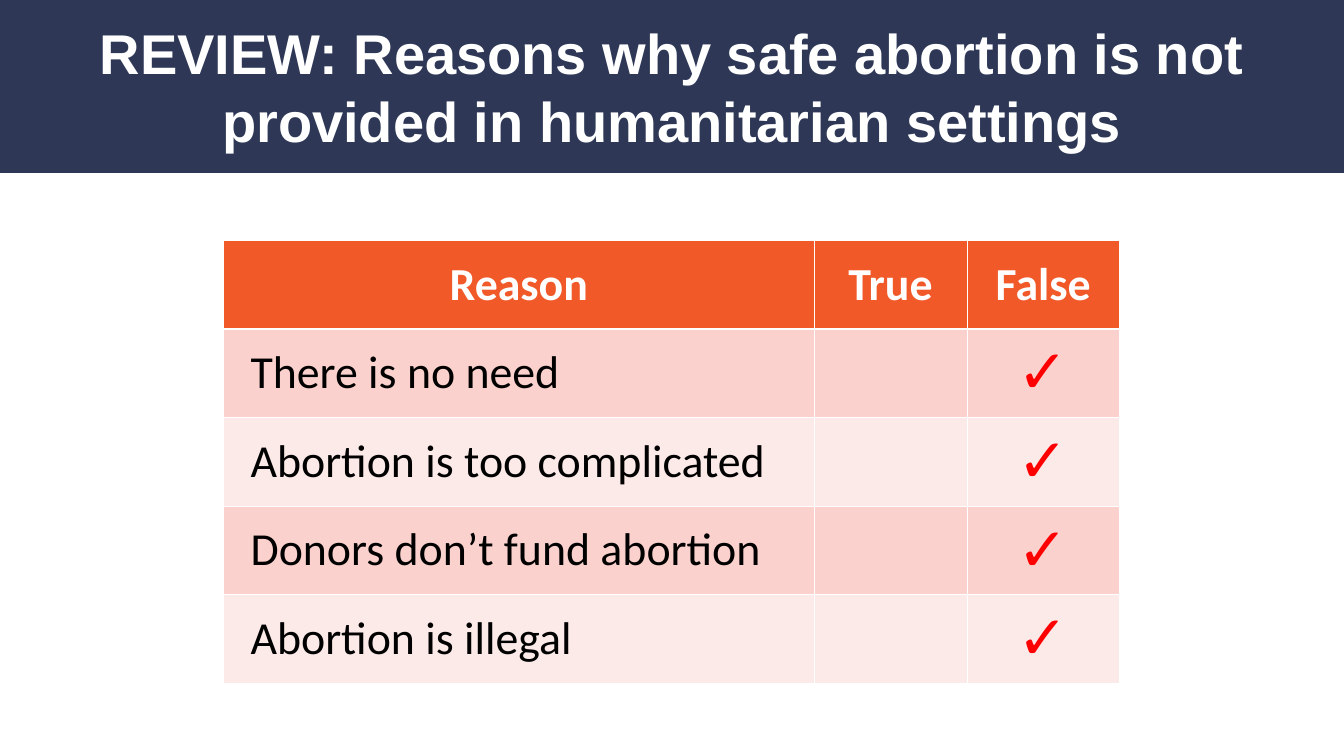
from dataclasses import dataclass

from lxml import etree
from pptx import Presentation
from pptx.dml.color import RGBColor
from pptx.enum.shapes import MSO_SHAPE
from pptx.enum.text import MSO_ANCHOR, PP_ALIGN
from pptx.oxml.ns import qn
from pptx.table import _Cell
from pptx.text.text import TextFrame
from pptx.util import Inches, Pt

RECTANGLE = MSO_SHAPE.RECTANGLE
MIDDLE = MSO_ANCHOR.MIDDLE
LEFT, CENTER = PP_ALIGN.LEFT, PP_ALIGN.CENTER

NAVY, ORANGE, WHITE, BLACK, RED = "2E3856", "F15928", "FFFFFF", "000000", "FF0000"
BANDS = ("FAD1CD", "FCEAE8")
COLUMN_WIDTHS = (9.66, 2.5, 2.5)
ROW_HEIGHT = 1.45


@dataclass(frozen=True)
class TextStyle:
    size: int
    color: str
    bold: bool = False
    align: PP_ALIGN = CENTER
    font: str = "Calibri"


TITLE = TextStyle(66, WHITE, bold=True, font="Arial")
HEADER = TextStyle(54, WHITE, bold=True)
REASON = TextStyle(54, BLACK, align=LEFT)
MARK = TextStyle(72, RED)

HEADINGS = ("Reason", "True", "False")
ANSWERS = (
    ("There is no need", "", "✓"),
    ("Abortion is too complicated", "", "✓"),
    ("Donors don’t fund abortion", "", "✓"),
    ("Abortion is illegal", "", "✓"),
)


def rgb(color: str) -> RGBColor:
    return RGBColor.from_string(color)


def write(frame: TextFrame, text: str, style: TextStyle) -> None:
    frame.text = text
    frame.vertical_anchor = MIDDLE
    para = frame.paragraphs[0]
    para.alignment = style.align
    for span in para.runs:
        span.font.name = style.font
        span.font.size = Pt(style.size)
        span.font.bold = style.bold
        span.font.color.rgb = rgb(style.color)


def add_border(cell: _Cell, side: str, points: int) -> None:
    properties = cell._tc.get_or_add_tcPr()
    line = etree.SubElement(properties, qn(f"a:ln{side}"), w=str(Pt(points)))
    fill = etree.SubElement(line, qn("a:solidFill"))
    etree.SubElement(fill, qn("a:srgbClr"), val=WHITE)


def format_cell(cell: _Cell, text: str, style: TextStyle, fill: str,
                top: int, bottom: int) -> None:
    write(cell.text_frame, text, style)
    cell.vertical_anchor = MIDDLE
    if style.align == LEFT:
        cell.margin_left = Inches(0.44)
    for side, points in (("L", 1), ("R", 1), ("T", top), ("B", bottom)):
        add_border(cell, side, points)
    cell.fill.solid()
    cell.fill.fore_color.rgb = rgb(fill)


def add_title(page, text: str) -> None:
    """Place the title over a full-width band."""
    title = page.shapes.title
    title.left, title.top = Inches(1.33), Inches(0.3)
    title.width, title.height = Inches(19.33), Inches(2.22)
    frame = title.text_frame
    write(frame, text, TITLE)
    frame.word_wrap = True
    frame.margin_left = frame.margin_right = frame.margin_top = frame.margin_bottom = 0

    band = page.shapes.add_shape(RECTANGLE, 0, 0, Inches(21.99), Inches(2.83))
    band.shadow.inherit = False
    band.fill.solid()
    band.fill.fore_color.rgb = rgb(NAVY)
    band.line.fill.background()
    title.element.addprevious(band.element)


def add_reason_table(page) -> None:
    rows = (HEADINGS, *ANSWERS)
    table = page.shapes.add_table(
        len(rows), len(HEADINGS), Inches(3.66), Inches(3.93),
        Inches(sum(COLUMN_WIDTHS)), Inches(ROW_HEIGHT * len(rows)),
    ).table
    for column, width in zip(table.columns, COLUMN_WIDTHS):
        column.width = Inches(width)
    for row_index, texts in enumerate(rows):
        table.rows[row_index].height = Inches(ROW_HEIGHT)
        is_header = row_index == 0
        fill = ORANGE if is_header else BANDS[(row_index - 1) % 2]
        styles = (HEADER,) * 3 if is_header else (REASON, MARK, MARK)
        top, bottom = 3 if row_index == 1 else 1, 3 if is_header else 1
        for column_index, (text, style) in enumerate(zip(texts, styles)):
            format_cell(table.cell(row_index, column_index), text, style, fill, top, bottom)


def main() -> None:
    deck = Presentation()
    deck.slide_width, deck.slide_height = Inches(21.99), Inches(12.37)
    page = deck.slides.add_slide(deck.slide_layouts.get_by_name("Title Only"))
    add_title(page, "REVIEW: Reasons why safe abortion is not provided in humanitarian settings")
    add_reason_table(page)
    deck.save("out.pptx")


if __name__ == "__main__":
    main()
